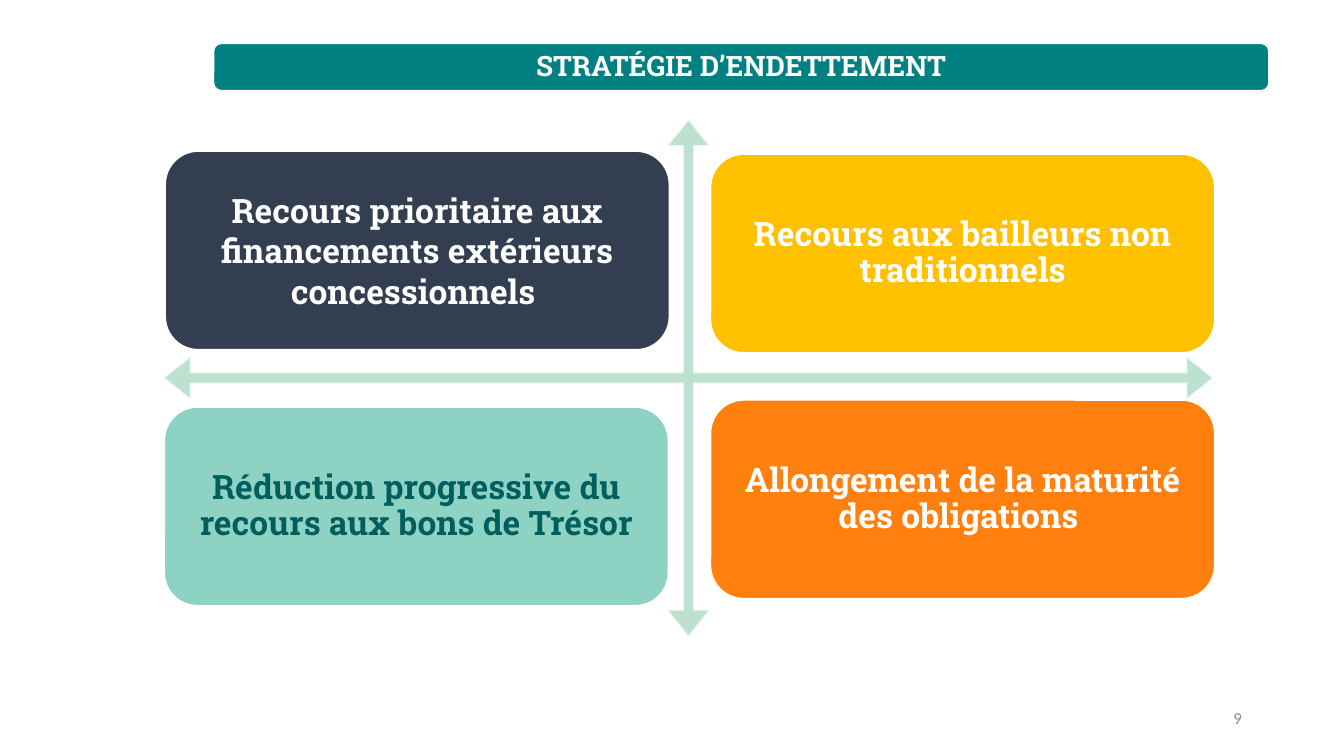
from pptx import Presentation
from pptx.dml.color import RGBColor
from pptx.enum import shapes, text
from pptx.util import Pt

KIND = shapes.MSO_SHAPE
ALIGN = text.PP_ALIGN


def paint(shape, fill, line, width):
    shape.shadow.inherit = False
    shape.fill.solid()
    shape.fill.fore_color.rgb = RGBColor.from_string(fill)
    shape.line.color.rgb = RGBColor.from_string(line)
    shape.line.width = Pt(width)


def write(shape, words, color, size, font="Roboto Slab", bold=True,
          align=ALIGN.CENTER, space=0.9, inset=7.2):
    frame = shape.text_frame
    look = {"word_wrap": True, "vertical_anchor": text.MSO_ANCHOR.MIDDLE,
            "margin_left": Pt(inset), "margin_right": Pt(inset),
            "margin_top": Pt(3.6), "margin_bottom": Pt(3.6)}
    for key, value in look.items():
        setattr(frame, key, value)
    para = frame.paragraphs[0]
    para.alignment = align
    para.line_spacing = space
    run = para.add_run()
    run.text = words
    for key, value in {"name": font, "size": Pt(size), "bold": bold}.items():
        setattr(run.font, key, value)
    run.font.color.rgb = RGBColor.from_string(color)


deck = Presentation()
deck.slide_width, deck.slide_height = Pt(960), Pt(540)
slide = deck.slides.add_slide(deck.slide_layouts[6])
tree = slide.shapes

number = tree.add_textbox(Pt(678.2), Pt(498.2), Pt(216), Pt(28.8))
write(number, "9", "8C8C8C", 12, "Calibri", False, ALIGN.RIGHT, 1.0)

cross = tree.add_shape(KIND.QUAD_ARROW, Pt(117.4), Pt(85.7), Pt(748.8), Pt(368.6))
for place, value in enumerate((0.02, 0.04, 0.05)):
    cross.adjustments[place] = value
paint(cross, "BEE0CF", "EBF9F4", 0.75)

cards = [
    (118.1, 108, "333F50", "FFFFFF", 1.0,
     "Recours prioritaire aux financements extérieurs concessionnels "),
    (507.6, 110.2, "FFC000", "FFFFFF", 0.9,
     "Recours aux bailleurs non traditionnels"),
    (117.4, 290.9, "8ED2C3", "005E5C", 0.9,
     "Réduction progressive du recours aux bons de Trésor"),
    (507.6, 285.8, "FF800E", "FFFFFF", 0.9,
     "Allongement de la maturité des obligations "),
]
for left, top, fill, color, space, words in cards:
    card = tree.add_shape(KIND.ROUNDED_RECTANGLE, Pt(left), Pt(top), Pt(360), Pt(141.8))
    paint(card, fill, "FFFFFF", 1)
    write(card, words, color, 24, space=space)

title = tree.add_shape(KIND.ROUNDED_RECTANGLE, Pt(152.6), Pt(31), Pt(753.8), Pt(33.8))
paint(title, "008080", "FFFFFF", 1)
write(title, "STRATÉGIE D’ENDETTEMENT", "FFFFFF", 20)

deck.save("out.pptx")
